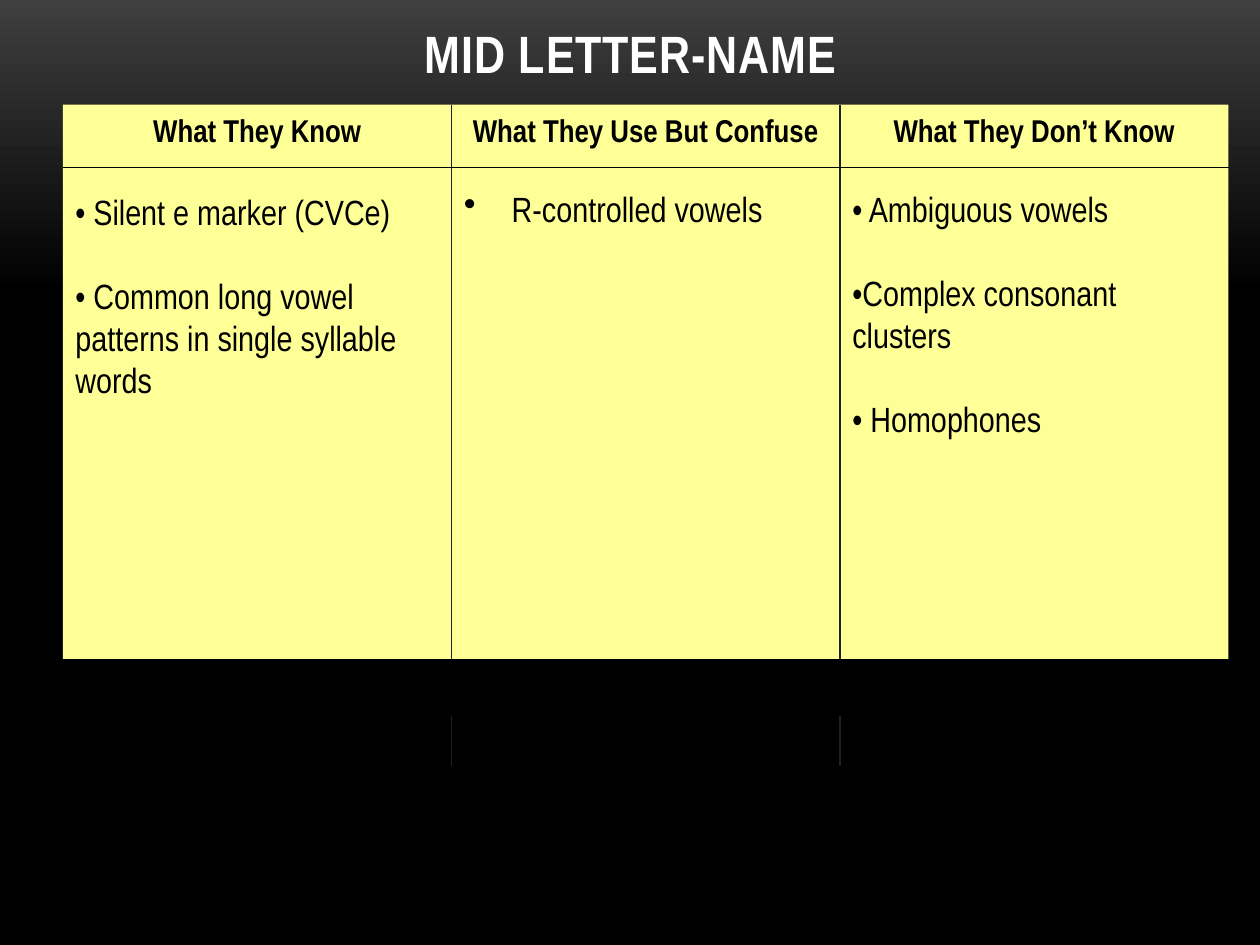
from pptx import Presentation
from pptx.dml.color import RGBColor
from pptx.enum.shapes import MSO_CONNECTOR, MSO_SHAPE
from pptx.enum.text import MSO_ANCHOR, PP_ALIGN
from pptx.oxml.ns import qn
from pptx.util import Inches, Pt
from lxml.etree import SubElement

BLACK = RGBColor(0, 0, 0)
WHITE = RGBColor(0xFF, 0xFF, 0xFF)
CHARCOAL = RGBColor(0x3F, 0x3F, 0x3F)
RULE_GRAY = RGBColor(0x1F, 0x21, 0x23)
YELLOW = RGBColor(0xFF, 0xFF, 0x97)

# Column grid, in inches
LEFT, TOP, WIDTH = 0.5, 0.83, 9.25
COLUMN = WIDTH / 3
HEADER_BOTTOM, BAND_TOP, RULE_BOTTOM = 1.33, 5.24, 6.08

# Heading, panel height, items as (text, gap before, bulleted)
COLUMNS = [
    ("What They Know", 4.54, [
        ("• Silent e marker (CVCe)", 24, False),
        ("• Common long vowel", 24, False),
        ("patterns in single syllable", 0, False),
        ("words", 0, False)]),
    ("What They Use But Confuse", 4.41, [
        ("R-controlled vowels", 22, True)]),
    ("What They Don’t Know", 4.85, [
        ("• Ambiguous vowels", 22, False),
        ("•Complex consonant clusters", 24, False),
        ("• Homophones", 24, False)]),
]


class SlideBuilder:
    font_name = "Arial Narrow"

    def __init__(self, slide):
        self.slide = slide

    def background(self):
        fill = self.slide.background.fill
        fill.gradient()
        fill.gradient_angle = 270
        for stop, color, position in zip(fill.gradient_stops, (CHARCOAL, BLACK), (0, 0.31)):
            stop.color.rgb = color
            stop.position = position

    def set_text(self, paragraph, text, size, color, bold=False, align=PP_ALIGN.LEFT, gap=0):
        paragraph.text = text
        paragraph.alignment = align
        if gap:
            paragraph.space_before = Pt(gap)
        font = paragraph.runs[0].font
        font.name, font.size, font.bold = self.font_name, Pt(size), bold
        font.color.rgb = color

    def title(self, text):
        box = self.slide.shapes.add_textbox(
            Inches(0.67), Inches(-0.08), Inches(8.67), Inches(0.8))
        frame = box.text_frame
        frame.word_wrap = True
        frame.vertical_anchor = MSO_ANCHOR.BOTTOM
        heading = frame.paragraphs[0]
        self.set_text(heading, text, 30, WHITE, True, PP_ALIGN.CENTER)
        heading.runs[0].font._element.set("spc", "50")

    def rectangle(self, left, top, width, height, color):
        shape = self.slide.shapes.add_shape(
            MSO_SHAPE.RECTANGLE, Inches(left), Inches(top), Inches(width), Inches(height))
        shape.shadow.inherit = False
        shape.fill.solid()
        shape.fill.fore_color.rgb = color
        shape.line.fill.background()
        return shape

    def panel(self, column, heading, height, items):
        shape = self.rectangle(LEFT + column * COLUMN, TOP, COLUMN, height, YELLOW)
        frame = shape.text_frame
        frame.word_wrap = True
        frame.vertical_anchor = MSO_ANCHOR.TOP
        self.set_text(frame.paragraphs[0], heading, 18, BLACK, True, PP_ALIGN.CENTER)
        for text, gap, bulleted in items:
            item = frame.add_paragraph()
            self.set_text(item, text, 20, BLACK, gap=gap)
            if bulleted:
                self.bullet(item)

    def bullet(self, paragraph):
        properties = paragraph._p.get_or_add_pPr()
        properties.set("marL", str(Inches(0.38)))
        properties.set("indent", str(Inches(-0.38)))
        SubElement(properties, qn("a:buChar")).set("char", "•")

    def rule(self, x1, y1, x2, y2, color):
        line = self.slide.shapes.add_connector(
            MSO_CONNECTOR.STRAIGHT, Inches(x1), Inches(y1), Inches(x2), Inches(y2))
        line.line.color.rgb = color
        line.line.width = Pt(0.75)
        SubElement(line._element.spPr, qn("a:effectLst"))


def main():
    deck = Presentation()
    deck.slide_width, deck.slide_height = Inches(10), Inches(7.5)
    builder = SlideBuilder(deck.slides.add_slide(deck.slide_layouts[6]))

    builder.background()
    builder.title("MID LETTER-NAME")

    # Three columns of spelling features
    for column, (heading, height, items) in enumerate(COLUMNS):
        builder.panel(column, heading, height, items)

    # Column dividers and header rule
    for divider in (1, 2):
        x = LEFT + divider * COLUMN
        builder.rule(x, TOP, x, RULE_BOTTOM, RULE_GRAY)
    builder.rule(LEFT, HEADER_BOTTOM, LEFT + WIDTH, HEADER_BOTTOM, BLACK)

    # Black band that evens the column bottoms
    band = builder.rectangle(LEFT, BAND_TOP, WIDTH, 0.44, BLACK)
    band.line.color.rgb = BLACK
    band.line.width = Pt(0.85)

    deck.save("out.pptx")


if __name__ == "__main__":
    main()
